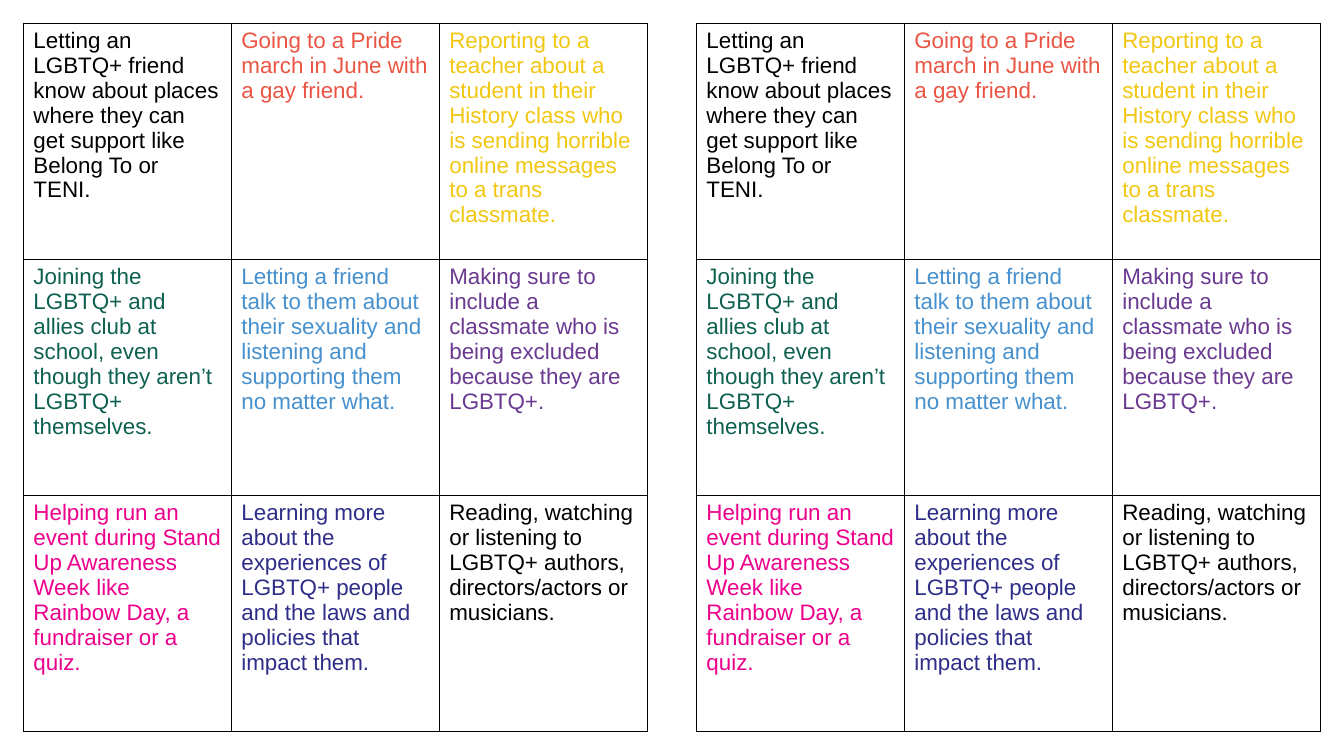
from dataclasses import dataclass

from lxml import etree
from pptx import Presentation
from pptx.dml.color import RGBColor
from pptx.oxml.ns import qn
from pptx.slide import Slide
from pptx.table import _Cell
from pptx.util import Cm, Pt

BLANK_LAYOUT = 6
COLUMNS = 3
ROWS = 3
COLUMN_WIDTH = Cm(5.24)
ROW_HEIGHT = Cm(5.95)
TABLE_TOP = Cm(0.59)
TABLE_LEFTS = (Cm(0.59), Cm(17.55))
BORDER_SIDES = ("a:lnL", "a:lnR", "a:lnT", "a:lnB")


@dataclass(frozen=True)
class Theme:
    font: str = "Arial"
    text_size: Pt = Pt(16)
    border_width: Pt = Pt(1)
    paper: str = "FFFFFF"
    black: str = "000000"
    red: str = "EA5543"
    yellow: str = "F1C712"
    green: str = "0E6150"
    blue: str = "4690CD"
    purple: str = "6A3A91"
    pink: str = "EC008C"
    navy: str = "2E2E88"


@dataclass(frozen=True)
class ActionCard:
    text: str
    color: str


THEME = Theme()

# Cards in reading order, three to a row
CARDS = (
    ActionCard("Letting an LGBTQ+ friend know about places where they can "
               "get support like Belong To or TENI.", THEME.black),
    ActionCard("Going to a Pride march in June with a gay friend.", THEME.red),
    ActionCard("Reporting to a teacher about a student in their History class who "
               "is sending horrible online messages to a trans classmate.", THEME.yellow),
    ActionCard("Joining the LGBTQ+ and allies club at school, even though "
               "they aren’t LGBTQ+ themselves.", THEME.green),
    ActionCard("Letting a friend talk to them about their sexuality and listening "
               "and supporting them no matter what.", THEME.blue),
    ActionCard("Making sure to include a classmate who is being excluded "
               "because they are LGBTQ+.", THEME.purple),
    ActionCard("Helping run an event during Stand Up Awareness Week like "
               "Rainbow Day, a fundraiser or a quiz.", THEME.pink),
    ActionCard("Learning more about the experiences of LGBTQ+ people and the "
               "laws and policies that impact them.", THEME.navy),
    ActionCard("Reading, watching or listening to LGBTQ+ authors, "
               "directors/actors or musicians.", THEME.black),
)


def add_borders(cell: _Cell) -> None:
    """Outline a cell; border elements must come before its fill."""
    properties = cell._tc.get_or_add_tcPr()
    for position, side in enumerate(BORDER_SIDES):
        line = etree.Element(qn(side), w=str(THEME.border_width))
        fill = etree.SubElement(line, qn("a:solidFill"))
        etree.SubElement(fill, qn("a:srgbClr"), val=THEME.black)
        properties.insert(position, line)


def fill_cell(cell: _Cell, card: ActionCard) -> None:
    cell.fill.solid()
    cell.fill.fore_color.rgb = RGBColor.from_string(THEME.paper)
    add_borders(cell)
    paragraph = cell.text_frame.paragraphs[0]
    paragraph.text = card.text
    paragraph.font.name = THEME.font
    paragraph.font.size = THEME.text_size
    paragraph.font.color.rgb = RGBColor.from_string(card.color)


def add_card_table(slide: Slide, left: Cm) -> None:
    table = slide.shapes.add_table(
        ROWS, COLUMNS, left, TABLE_TOP, COLUMNS * COLUMN_WIDTH, ROWS * ROW_HEIGHT
    ).table
    table.first_row = False
    table.horz_banding = False
    for column in table.columns:
        column.width = COLUMN_WIDTH
    for row in table.rows:
        row.height = ROW_HEIGHT
    for cell, card in zip(table.iter_cells(), CARDS):
        fill_cell(cell, card)


def main() -> None:
    presentation = Presentation()
    presentation.slide_width = Cm(33.87)
    presentation.slide_height = Cm(19.05)
    slide = presentation.slides.add_slide(presentation.slide_layouts[BLANK_LAYOUT])

    # Two identical card sheets side by side
    for left in TABLE_LEFTS:
        add_card_table(slide, left)

    presentation.save("out.pptx")


if __name__ == "__main__":
    main()
